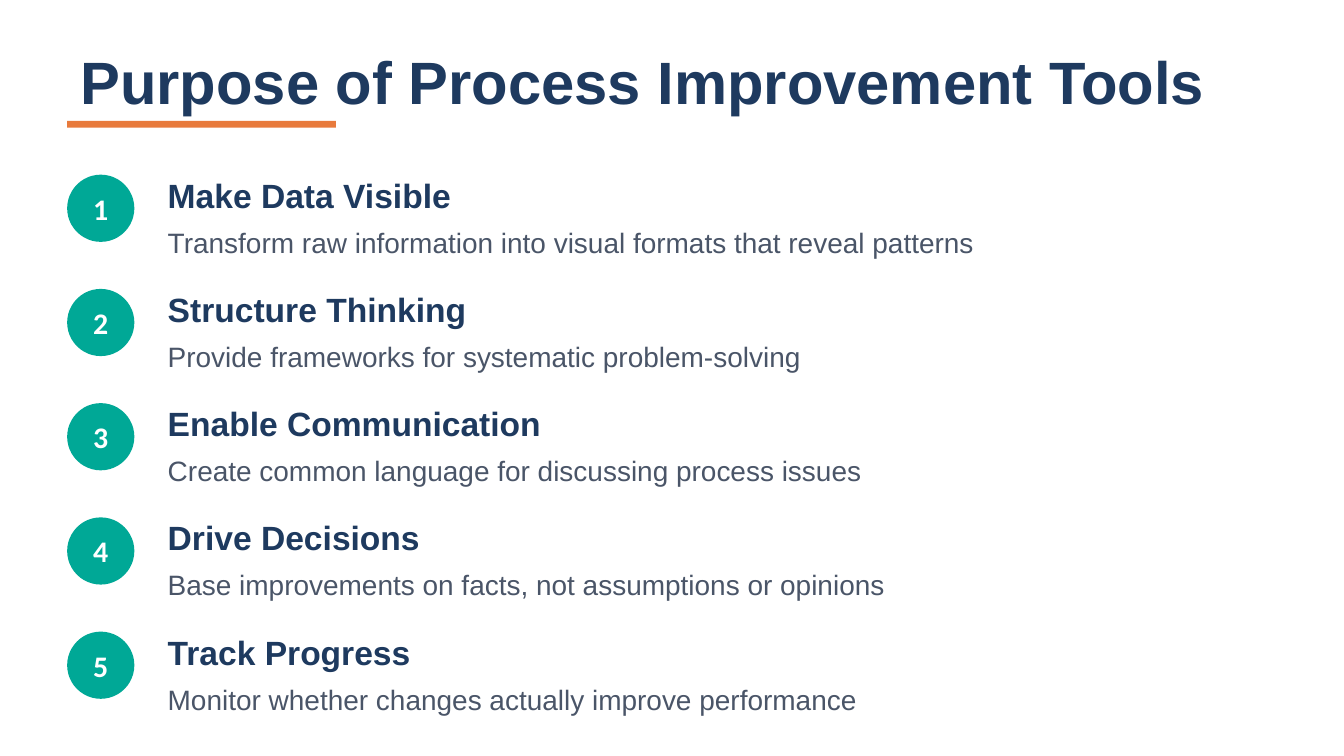
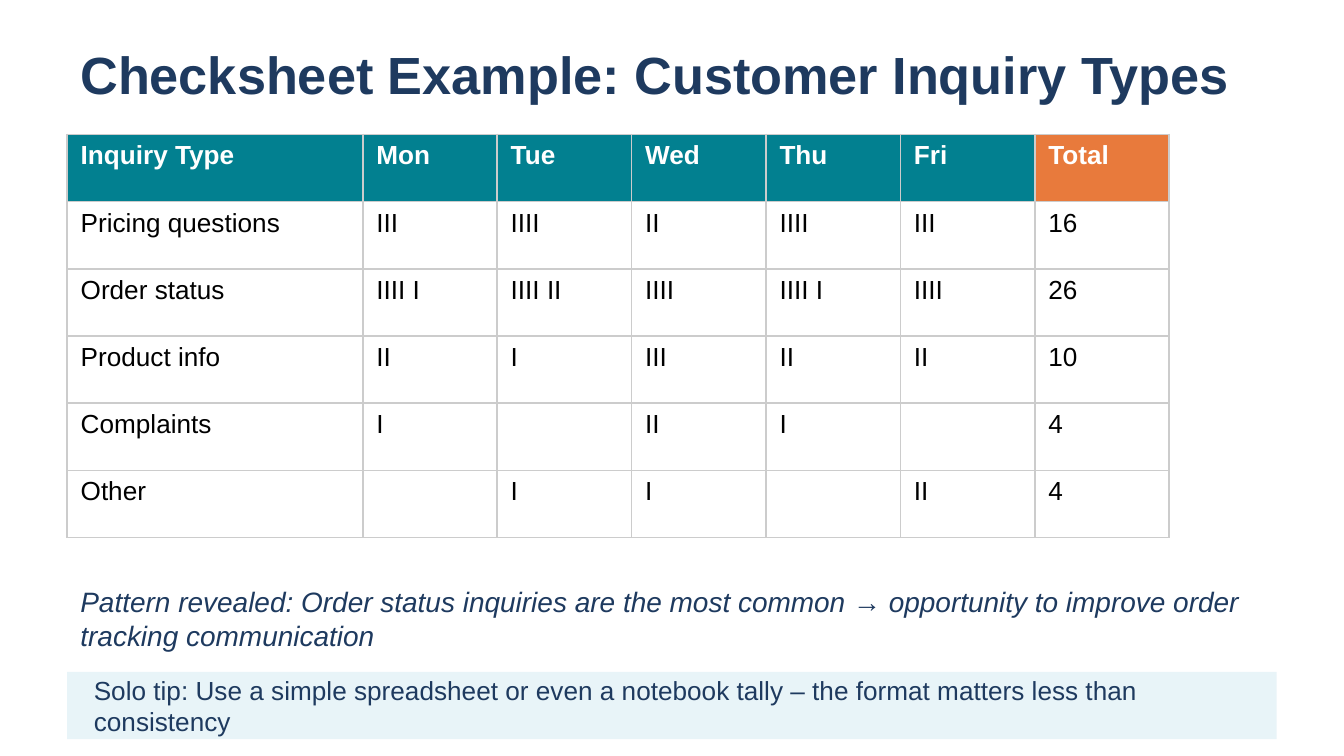
from lxml.etree import SubElement
from pptx import Presentation
from pptx.dml.color import RGBColor
from pptx.enum.shapes import MSO_SHAPE as Shape
from pptx.enum.text import MSO_ANCHOR as Anchor, PP_ALIGN as Align
from pptx.oxml.ns import qn
from pptx.util import Inches, Pt

NAVY = RGBColor(0x1E, 0x3A, 0x5F)
ORANGE = RGBColor(0xE8, 0x7A, 0x3C)
GREEN = RGBColor(0x00, 0xA8, 0x96)
TEAL = RGBColor(0x02, 0x80, 0x90)
SLATE = RGBColor(0x4A, 0x55, 0x68)
PALE_BLUE = RGBColor(0xE8, 0xF4, 0xF8)
GRID_GRAY = RGBColor(0xCC, 0xCC, 0xCC)
WHITE = RGBColor(0xFF, 0xFF, 0xFF)
BLACK = RGBColor(0x00, 0x00, 0x00)

MARGIN = 0.5
CONTENT_WIDTH = 9

PURPOSES = [
    ("Make Data Visible", "Transform raw information into visual formats that reveal patterns"),
    ("Structure Thinking", "Provide frameworks for systematic problem-solving"),
    ("Enable Communication", "Create common language for discussing process issues"),
    ("Drive Decisions", "Base improvements on facts, not assumptions or opinions"),
    ("Track Progress", "Monitor whether changes actually improve performance"),
]

CHECKSHEET = [
    ["Inquiry Type", "Mon", "Tue", "Wed", "Thu", "Fri", "Total"],
    ["Pricing questions", "III", "IIII", "II", "IIII", "III", "16"],
    ["Order status", "IIII I", "IIII II", "IIII", "IIII I", "IIII", "26"],
    ["Product info", "II", "I", "III", "II", "II", "10"],
    ["Complaints", "I", "", "II", "I", "", "4"],
    ["Other", "", "I", "I", "", "II", "4"],
]


class SlideBuilder:
    """Holds the deck, its style and the slide being drawn."""

    def __init__(self):
        self.deck = Presentation()
        self.deck.slide_width = Inches(10)
        self.deck.slide_height = Inches(10 * 9 / 16)
        self.slide = None

    def new_slide(self, title, size, height):
        self.slide = self.deck.slides.add_slide(self.deck.slide_layouts[6])
        self.text(title, MARGIN, 0.3, CONTENT_WIDTH, height, size, bold=True)

    def style(self, para, size, color, bold=False, italic=False, font="Arial"):
        for span in para.runs:
            span.font.name = font
            span.font.size = Pt(size)
            span.font.bold = bold
            span.font.italic = italic
            span.font.color.rgb = color

    def text(self, words, left, top, width, height, size, color=NAVY,
             align=Align.LEFT, **look):
        box = self.slide.shapes.add_textbox(
            Inches(left), Inches(top), Inches(width), Inches(height))
        frame = box.text_frame
        frame.word_wrap = True
        frame.vertical_anchor = Anchor.MIDDLE
        frame.text = words
        para = frame.paragraphs[0]
        para.alignment = align
        self.style(para, size, color, **look)

    def shape(self, kind, left, top, width, height, color):
        shape = self.slide.shapes.add_shape(
            kind, Inches(left), Inches(top), Inches(width), Inches(height))
        shape.shadow.inherit = False
        shape.fill.solid()
        shape.fill.fore_color.rgb = color
        shape.line.fill.background()

    def badge(self, number, left, top, size):
        self.shape(Shape.OVAL, left, top, size, size, GREEN)
        self.text(str(number), left, top, size, size, 16, WHITE,
                  align=Align.CENTER, bold=True, font="Calibri")

    def cell_borders(self, cell):
        properties = cell._tc.get_or_add_tcPr()
        for side in ("lnL", "lnR", "lnT", "lnB"):
            line = SubElement(properties, qn(f"a:{side}"), w=str(Pt(1)))
            fill = SubElement(line, qn("a:solidFill"))
            SubElement(fill, qn("a:srgbClr"), val=str(GRID_GRAY))

    def table(self, rows, left, top, column_widths, row_height):
        table = self.slide.shapes.add_table(
            len(rows), len(column_widths), Inches(left), Inches(top),
            Inches(sum(column_widths)), Inches(row_height * len(rows))).table
        table.first_row = False
        table.horz_banding = False
        for column, width in zip(table.columns, column_widths):
            column.width = Inches(width)
        last = len(column_widths) - 1
        for r, row in enumerate(rows):
            header = r == 0
            for c, words in enumerate(row):
                cell = table.cell(r, c)
                cell.text = words
                self.style(cell.text_frame.paragraphs[0], 14,
                           WHITE if header else BLACK, bold=header)
                self.cell_borders(cell)
                if header:
                    cell.fill.solid()
                    cell.fill.fore_color.rgb = ORANGE if c == last else TEAL
                else:
                    cell.fill.background()


def purpose_slide(builder):
    builder.new_slide("Purpose of Process Improvement Tools", 32, 0.6)
    builder.shape(Shape.RECTANGLE, MARGIN, 0.9, 2, 0.05, ORANGE)

    # Numbered purposes
    for index, (heading, detail) in enumerate(PURPOSES):
        top = 1.2 + 0.85 * index
        builder.badge(index + 1, MARGIN, top + 0.1, 0.5)
        builder.text(heading, 1.15, top, 3, 0.5, 18, bold=True)
        builder.text(detail, 1.15, top + 0.4, 8, 0.4, 15, SLATE)


def checksheet_slide(builder):
    builder.new_slide("Checksheet Example: Customer Inquiry Types", 28, 0.5)
    builder.table(CHECKSHEET, MARGIN, 1, [2.2] + [1] * 6, 0.5)

    # Finding and tip
    builder.text("Pattern revealed: Order status inquiries are the most common → "
                 "opportunity to improve order tracking communication",
                 MARGIN, 4.3, CONTENT_WIDTH, 0.6, 15, italic=True)
    builder.shape(Shape.RECTANGLE, MARGIN, 5, CONTENT_WIDTH, 0.5, PALE_BLUE)
    builder.text("Solo tip: Use a simple spreadsheet or even a notebook tally – "
                 "the format matters less than consistency",
                 MARGIN + 0.1, 5.05, CONTENT_WIDTH - 0.2, 0.4, 14)


def main():
    builder = SlideBuilder()
    purpose_slide(builder)
    checksheet_slide(builder)
    builder.deck.save("out.pptx")


if __name__ == "__main__":
    main()
